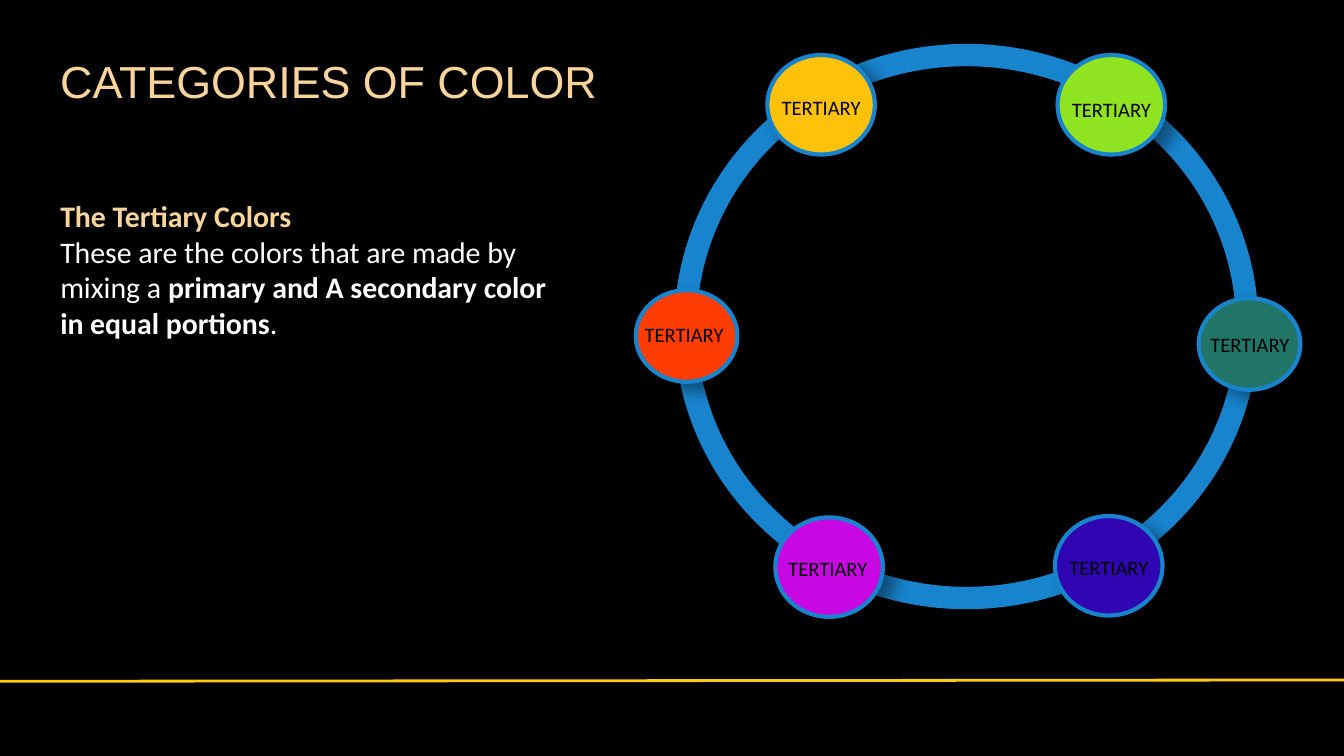
from dataclasses import dataclass

from lxml.etree import SubElement
from pptx import Presentation
from pptx.dml.color import RGBColor
from pptx.enum.shapes import MSO_CONNECTOR, MSO_SHAPE
from pptx.enum.text import MSO_ANCHOR, PP_ALIGN
from pptx.oxml.ns import qn
from pptx.util import Pt


@dataclass(frozen=True)
class Theme:
    background: str = "000000"
    heading: str = "F9D59B"
    body: str = "FFFFFF"
    label: str = "000000"
    ring: str = "1884CD"
    rule: str = "FFCB0A"
    shadow: str = "000000"
    heading_font: str = "Arial"
    body_font: str = "Calibri"
    heading_size: float = 24
    body_size: float = 16
    label_size: float = 11


THEME = Theme()
SLIDE_SIZE = (720, 405)

TITLE = "CATEGORIES OF COLOR"
TITLE_BOX = (25.2, 25.2, 341.3, 58.3)
BODY_BOX = (25.2, 102.2, 282.2, 108.7)
# Paragraphs of (text, bold, color) runs
BODY = [
    [("The Tertiary Colors", True, THEME.heading)],
    [
        ("These are the colors that are made by mixing a ", False, THEME.body),
        ("primary and A secondary color in equal portions", True, THEME.body),
        (".", False, THEME.body),
    ],
]

RING_BOX = (367.2, 29.5, 301, 290.9)
RULE = (0, 365, 720, 364.3)
LARGE = (57.6, 53.3)
SMALL = (54.4, 49)
LABEL = "TERTIARY"
LABEL_SIZE = (60, 20.9)
# Fill, left, top, size, label centre x, label top
SWATCHES = [
    ("8FE321", 566.6, 29.5, LARGE, 595.4, 48.2),
    ("217567", 642.2, 159.8, SMALL, 669.6, 174.2),
    ("3006B3", 565.2, 276.5, LARGE, 594, 293.8),
    ("C808E3", 415.4, 277.2, LARGE, 443.5, 294.5),
    ("FF3C02", 340.6, 155.5, SMALL, 366.5, 169.2),
    ("FFC20A", 411.1, 29.5, LARGE, 439.9, 47.5),
]


def rgb(value):
    return RGBColor.from_string(value)


def points(values):
    return [Pt(value) for value in values]


def add_shadow(shape, alpha, blur, distance, angle):
    shape.shadow.inherit = False
    effects = shape._element.spPr.find(qn("a:effectLst"))
    outer = SubElement(
        effects, qn("a:outerShdw"), blurRad=str(Pt(blur)), dist=str(Pt(distance)),
        dir=str(angle * 60000), algn="tl", rotWithShape="0",
    )
    color = SubElement(outer, qn("a:srgbClr"), val=THEME.shadow)
    SubElement(color, qn("a:alpha"), val=str(alpha * 1000))


def add_ellipse(slide, box, line_width, fill=None, **shadow):
    shape = slide.shapes.add_shape(MSO_SHAPE.OVAL, *points(box))
    if fill:
        shape.fill.solid()
        shape.fill.fore_color.rgb = rgb(fill)
    else:
        shape.fill.background()
    shape.line.color.rgb = rgb(THEME.ring)
    shape.line.width = Pt(line_width)
    add_shadow(shape, **shadow)


def add_text(slide, box, paragraphs, *, font, size, align=PP_ALIGN.LEFT, wrap=True):
    frame = slide.shapes.add_textbox(*points(box)).text_frame
    frame.word_wrap = wrap
    frame.vertical_anchor = MSO_ANCHOR.TOP
    for index, runs in enumerate(paragraphs):
        paragraph = frame.add_paragraph() if index else frame.paragraphs[0]
        paragraph.alignment = align
        for text, bold, color in runs:
            run = paragraph.add_run()
            run.text = text
            run.font.name = font
            run.font.size = Pt(size)
            run.font.bold = bold
            run.font.color.rgb = rgb(color)


def add_rule(slide):
    rule = slide.shapes.add_connector(MSO_CONNECTOR.STRAIGHT, *points(RULE))
    rule.line.color.rgb = rgb(THEME.rule)
    rule.line.width = Pt(1.5)
    SubElement(rule._element.spPr, qn("a:effectLst"))


def main():
    presentation = Presentation()
    presentation.slide_width, presentation.slide_height = points(SLIDE_SIZE)
    slide = presentation.slides.add_slide(presentation.slide_layouts[6])
    slide.background.fill.solid()
    slide.background.fill.fore_color.rgb = rgb(THEME.background)

    add_rule(slide)
    add_text(slide, TITLE_BOX, [[(TITLE, False, THEME.heading)]],
             font=THEME.heading_font, size=THEME.heading_size)
    add_text(slide, BODY_BOX, BODY, font=THEME.body_font, size=THEME.body_size)

    add_ellipse(slide, RING_BOX, 12, alpha=45, blur=7, distance=11, angle=39)
    for fill, left, top, size, _, _ in SWATCHES:
        add_ellipse(slide, (left, top, *size), 2.25, fill,
                    alpha=40, blur=8.8, distance=7, angle=35)
    for *_, center, top in SWATCHES:
        add_text(slide, (center - LABEL_SIZE[0] / 2, top, *LABEL_SIZE),
                 [[(LABEL, False, THEME.label)]], font=THEME.body_font,
                 size=THEME.label_size, align=PP_ALIGN.CENTER, wrap=False)

    presentation.save("out.pptx")


if __name__ == "__main__":
    main()
